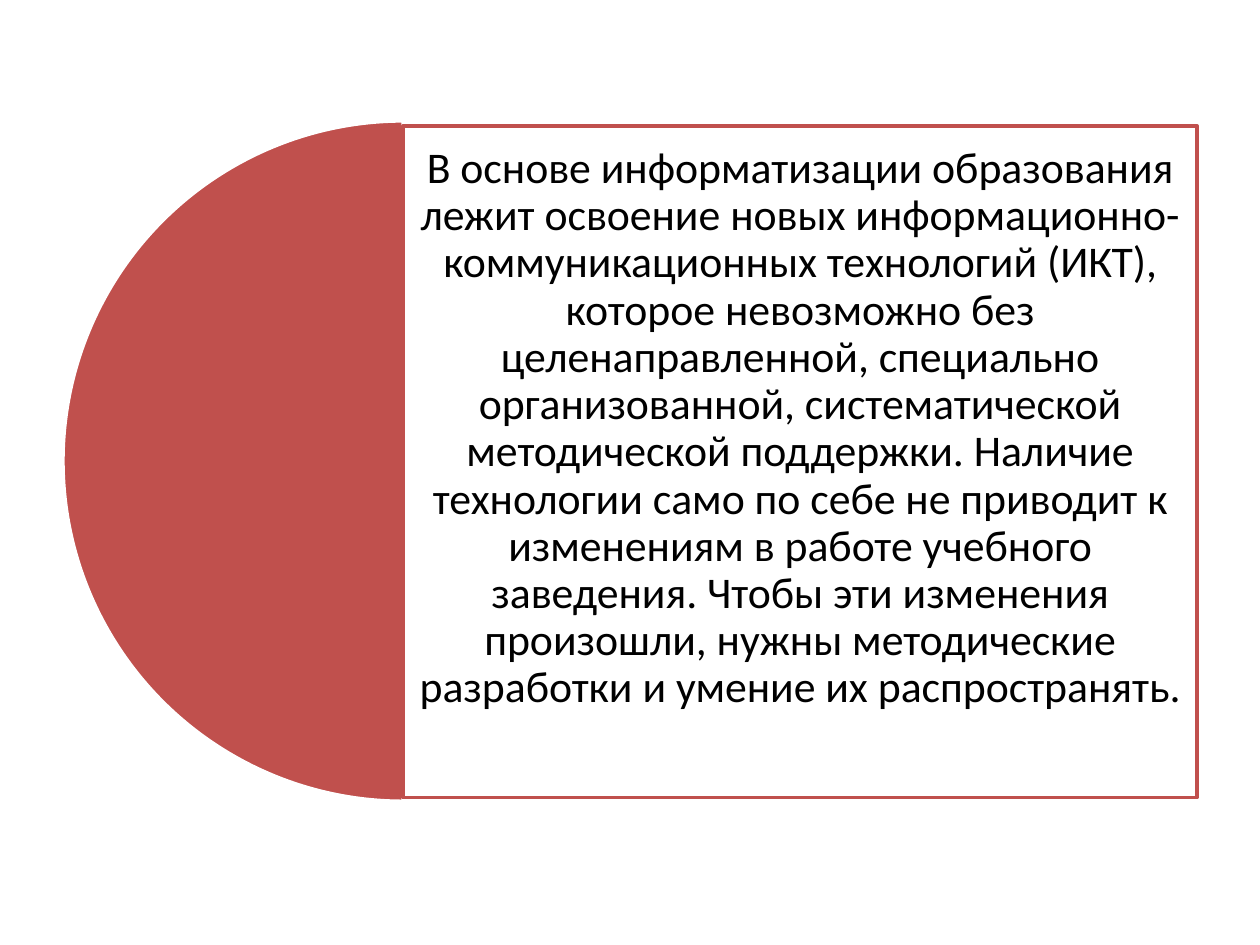
"""Build a slide with a half-disc and a framed statement on teaching with ICT."""
from lxml.etree import SubElement
from pptx import Presentation
from pptx.dml.color import RGBColor
from pptx.enum.shapes import MSO_SHAPE
from pptx.enum.text import MSO_ANCHOR, PP_ALIGN
from pptx.oxml.ns import qn
from pptx.util import Inches, Pt

RED = RGBColor(0xC0, 0x50, 0x4D)
WHITE = RGBColor(0xFF, 0xFF, 0xFF)
BLACK = RGBColor(0x00, 0x00, 0x00)

STATEMENT = (
    "В основе информатизации образования лежит освоение новых "
    "информационно-коммуникационных технологий (ИКТ), которое невозможно без "
    "целенаправленной, специально организованной, систематической методической "
    "поддержки. Наличие технологии само по себе не приводит к изменениям в работе "
    "учебного заведения. Чтобы эти изменения произошли, нужны методические "
    "разработки и умение их распространять."
)

prs = Presentation()
prs.slide_width, prs.slide_height = Inches(10), Inches(7.5)
s = prs.slides.add_slide(prs.slide_layouts[6])

margin = Inches(0.5)
disc = Inches(5.4)
disc_top = Inches(0.96)
frame_left = margin + disc // 2
frame_top = Inches(1)
frame_width = prs.slide_width - margin - frame_left
frame_height = Inches(5.33)

shapes = []
for kind, box, fill, line in (
    (MSO_SHAPE.PIE, (margin, disc_top, disc, disc), RED, WHITE),
    (MSO_SHAPE.RECTANGLE, (frame_left, frame_top, frame_width, frame_height), WHITE, RED),
):
    sp = s.shapes.add_shape(kind, *box)
    sp.shadow.inherit = False
    sp.fill.solid()
    sp.fill.fore_color.rgb = fill
    sp.line.color.rgb = line
    sp.line.width = Pt(2)
    shapes.append(sp)

half_disc, frame = shapes
half_disc.adjustments[0] = 54
half_disc.adjustments[1] = 162

color = frame.fill._xPr.find(qn("a:solidFill")).find(qn("a:srgbClr"))
SubElement(color, qn("a:alpha"), val="90000")

tf = frame.text_frame
tf.word_wrap = True
tf.vertical_anchor = MSO_ANCHOR.MIDDLE
tf.margin_left = tf.margin_right = tf.margin_top = Inches(0.1)
tf.margin_bottom = Inches(0.62)

p = tf.paragraphs[0]
p.alignment = PP_ALIGN.CENTER
p.line_spacing = 0.9
r = p.add_run()
r.text = STATEMENT
r.font.name = "Calibri"
r.font.size = Pt(25)
r.font.color.rgb = BLACK

prs.save("out.pptx")
